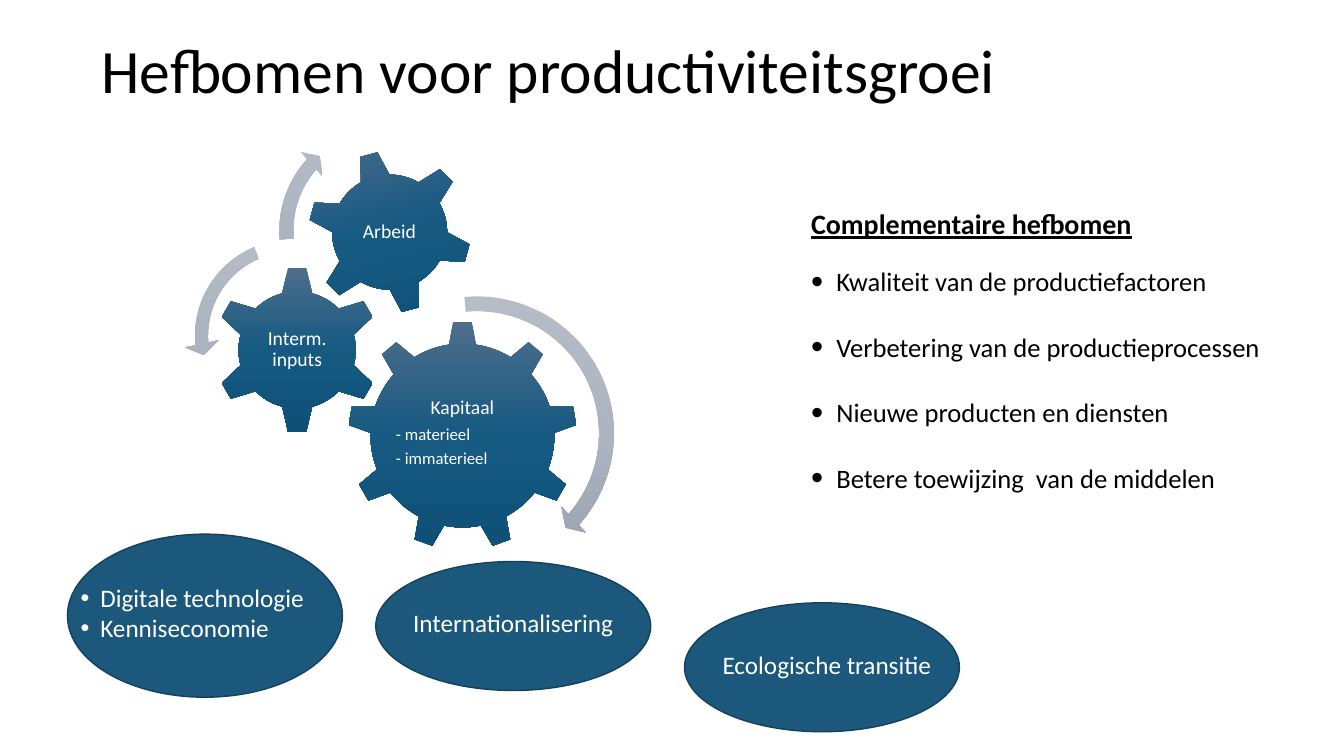
from copy import deepcopy

from lxml.etree import SubElement
from pptx import Presentation
from pptx.dml.color import RGBColor
from pptx.enum.shapes import MSO_SHAPE
from pptx.enum.text import MSO_ANCHOR, PP_ALIGN
from pptx.oxml.ns import qn
from pptx.util import Cm, Pt

FONT = "Calibri"
BLACK = "000000"
WHITE = "FFFFFF"
GEAR_COLORS = ("4E6E8C", "165981", "0F5077")
ARROW_COLORS = ("B6BDC7", "ABB4C0", "97A0AC")


def color(hex_code):
    return RGBColor.from_string(hex_code)


def add_text_area(slide, left, top, width, height, inset=None):
    area = slide.shapes.add_textbox(Cm(left), Cm(top), Cm(width), Cm(height))
    frame = area.text_frame
    frame.word_wrap = True
    if inset is not None:
        frame.vertical_anchor = MSO_ANCHOR.MIDDLE
        frame.margin_left = frame.margin_right = Cm(inset)
        frame.margin_top = frame.margin_bottom = Cm(inset)
    return frame


def add_line(frame, text, size, hex_code, after=0, spacing=1.0,
             align=PP_ALIGN.LEFT, heading=False):
    first = frame.paragraphs[0]
    line = frame.add_paragraph() if first.runs else first
    line.alignment = align
    line.line_spacing = spacing
    line.space_after = Pt(after)
    run = line.add_run()
    run.text = text
    run.font.name = FONT
    run.font.size = Pt(size)
    run.font.color.rgb = color(hex_code)
    run.font.bold = run.font.underline = heading
    return line


def add_bullet(line, indent, percent=100):
    properties = line._p.get_or_add_pPr()
    properties.set("marL", str(Cm(indent)))
    properties.set("indent", str(-Cm(indent)))
    SubElement(properties, qn("a:buSzPct"), val=str(percent * 1000))
    SubElement(properties, qn("a:buFont"), typeface="Arial")
    SubElement(properties, qn("a:buChar"), char="•")


def add_gradient_shape(slide, preset, left, top, side, colors, adjustments=()):
    part = slide.shapes.add_shape(preset, Cm(left), Cm(top), Cm(side), Cm(side))
    part.shadow.inherit = False
    part.line.fill.background()
    for index, value in enumerate(adjustments):
        part.adjustments[index] = value
    part.fill.gradient()
    part.fill.gradient_angle = 270
    stop_list = part._element.spPr.find(qn("a:gradFill")).find(qn("a:gsLst"))
    stop_list.append(deepcopy(stop_list[0]))
    for index, stop in enumerate(part.fill.gradient_stops):
        stop.position = index / 2
        stop.color.rgb = color(colors[index])
    return part


def add_gear(slide, preset, gear_box, label_box, label, details=(), rotation=0):
    gear = add_gradient_shape(slide, preset, *gear_box, GEAR_COLORS)
    gear.rotation = rotation
    frame = add_text_area(slide, *label_box, inset=0.05)
    add_line(frame, label, 14, WHITE, 4.9, 0.9, PP_ALIGN.CENTER)
    for detail in details:
        add_line(frame, detail, 12, WHITE, 4.2, 0.9)


def add_driver(slide, left, top, height, label_box, labels, bulleted=False):
    driver = slide.shapes.add_shape(
        MSO_SHAPE.OVAL, Cm(left), Cm(top), Cm(6.93), Cm(height))
    driver.shadow.inherit = False
    driver.fill.solid()
    driver.fill.fore_color.rgb = color("1B587C")
    driver.line.color.rgb = color("14415C")
    driver.line.width = Pt(1)
    frame = add_text_area(slide, *label_box)
    for label in labels:
        line = add_line(frame, label, 18, WHITE)
        if bulleted:
            add_bullet(line, 0.5)


def add_levers(slide):
    frame = add_text_area(slide, 20.19, 5.08, 12.17, 12.09)
    add_line(frame, "Complementaire hefbomen", 20, BLACK, 18, heading=True)
    for lever in ("Kwaliteit van de productiefactoren",
                  "Verbetering van de productieprocessen",
                  "Nieuwe producten en diensten",
                  "Betere toewijzing  van de middelen"):
        add_bullet(add_line(frame, lever, 19, BLACK, 24), 0.64, 130)


def main():
    deck = Presentation()
    deck.slide_width, deck.slide_height = Cm(33.87), Cm(19.05)
    slide = deck.slides.add_slide(deck.slide_layouts[6])

    title = add_text_area(slide, 2.31, 0.89, 29.21, 3.68)
    add_line(title, "Hefbomen voor productiviteitsgroei", 44, BLACK, spacing=0.9)
    add_levers(slide)

    add_gear(slide, MSO_SHAPE.GEAR_9, (8.76, 8.08, 5.79), (9.93, 9.42, 3.45, 2.97),
             "Kapitaal", ("- materieel", "- immaterieel"))
    add_gear(slide, MSO_SHAPE.GEAR_6, (5.38, 6.71, 4.22), (6.45, 7.77, 2.08, 2.08),
             "Interm. inputs")
    add_gear(slide, MSO_SHAPE.GEAR_6, (7.75, 3.78, 4.14), (8.66, 4.7, 2.31, 2.31),
             "Arbeid", rotation=345)

    for preset, left, top, side, adjustments in (
        (MSO_SHAPE.CIRCULAR_ARROW, 8.31, 7.21, 7.42,
         (0.05, 2.99, 25.06, 158.84, 0.06)),
        (MSO_SHAPE.LEFT_CIRCULAR_ARROW, 4.65, 5.77, 5.38,
         (0.06, 4.3, 104.89, 148.38, 0.08)),
        (MSO_SHAPE.CIRCULAR_ARROW, 6.81, 2.9, 5.82,
         (0.06, 3.94, 133.14, 105.08, 0.07)),
    ):
        add_gradient_shape(slide, preset, left, top, side, ARROW_COLORS, adjustments)

    add_driver(slide, 1.7, 13.46, 4.11, (1.78, 14.55, 6.93, 1.8),
               ("Digitale technologie", "Kenniseconomie"), bulleted=True)
    add_driver(slide, 17.25, 15.19, 3.25, (17.96, 16.23, 6.93, 1.02),
               ("Ecologische transitie",))
    add_driver(slide, 9.47, 14.15, 3.25, (10.16, 15.19, 6.93, 0.81),
               ("Internationalisering",))

    deck.save("out.pptx")


if __name__ == "__main__":
    main()
